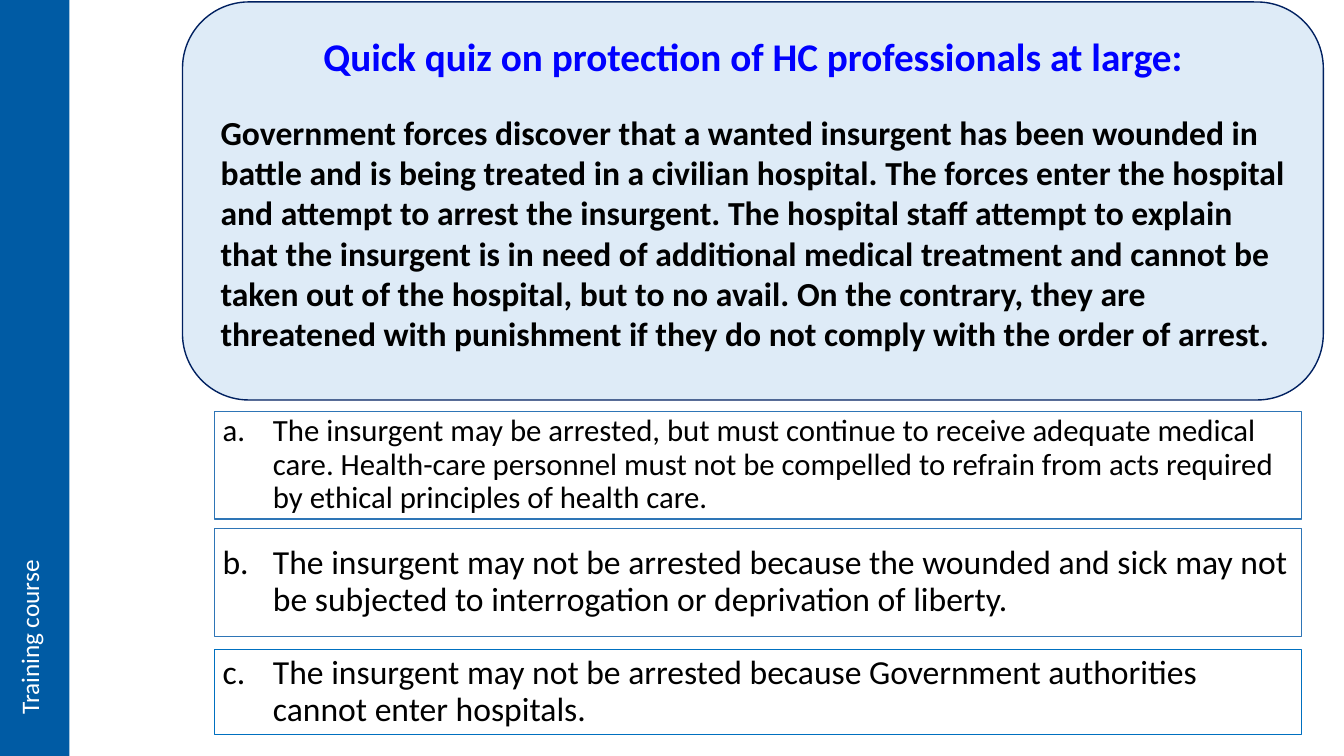
from dataclasses import dataclass

from lxml import etree
from pptx import Presentation
from pptx.dml.color import RGBColor
from pptx.enum.shapes import MSO_SHAPE
from pptx.enum.text import MSO_ANCHOR as ANCHOR, PP_ALIGN as ALIGN
from pptx.oxml.ns import qn
from pptx.shapes.autoshape import Shape
from pptx.slide import Slide
from pptx.text.text import TextFrame, _Paragraph as Paragraph
from pptx.util import Cm, Pt

FONT = "Calibri"
WHITE = RGBColor(0xFF, 0xFF, 0xFF)
BLACK = RGBColor(0x00, 0x00, 0x00)
SIDEBAR = RGBColor(0x00, 0x5B, 0xA4)
PANEL = RGBColor(0xDE, 0xEB, 0xF7)
NAVY = RGBColor(0x00, 0x20, 0x60)
TITLE = RGBColor(0x00, 0x00, 0xFF)
BLUE = RGBColor(0x2E, 0x75, 0xB6)
BRIGHT_BLUE = RGBColor(0x00, 0x70, 0xC0)

HEADING = "Quick quiz on protection of HC professionals at large:"
SCENARIO = (
    "Government forces discover that a wanted insurgent has been wounded in battle "
    "and is being treated in a civilian hospital. The forces enter the hospital and "
    "attempt to arrest the insurgent. The hospital staff attempt to explain that the "
    "insurgent is in need of additional medical treatment and cannot be taken out of "
    "the hospital, but to no avail. On the contrary, they are threatened with "
    "punishment if they do not comply with the order of arrest."
)


@dataclass
class Answer:
    top: float
    height: float
    size: int
    line: RGBColor
    text: str


ANSWERS = [
    Answer(10.36, 2.72, 22, BLUE,
           "The insurgent may be arrested, but must continue to receive adequate "
           "medical care. Health-care personnel must not be compelled to refrain "
           "from acts required by ethical principles of health care."),
    Answer(13.31, 2.72, 24, BLUE,
           "The insurgent may not be arrested because the wounded and sick may not "
           "be subjected to interrogation or deprivation of liberty."),
    Answer(16.36, 2.16, 24, BRIGHT_BLUE,
           "The insurgent may not be arrested because Government authorities cannot "
           "enter hospitals."),
]


def add_run(p: Paragraph, text: str, size: int, color: RGBColor, bold: bool = False) -> None:
    r = p.add_run()
    r.text = text
    r.font.name = FONT
    r.font.size = Pt(size)
    r.font.bold = bold
    r.font.color.rgb = color


def set_frame(tf: TextFrame, inset: float, anchor: ANCHOR) -> None:
    tf.word_wrap = True
    tf.vertical_anchor = anchor
    tf.margin_left = tf.margin_right = Cm(inset)
    tf.margin_top = tf.margin_bottom = Cm(inset)


def add_box(slide: Slide, kind: MSO_SHAPE, left: float, top: float, width: float,
            height: float, fill: RGBColor, line: RGBColor | None = None,
            weight: float = 1) -> Shape:
    sp = slide.shapes.add_shape(kind, Cm(left), Cm(top), Cm(width), Cm(height))
    sp.shadow.inherit = False
    sp.fill.solid()
    sp.fill.fore_color.rgb = fill
    if line is None:
        sp.line.fill.background()
    else:
        sp.line.color.rgb = line
        sp.line.width = Pt(weight)
    return sp


def add_sidebar(slide: Slide) -> None:
    add_box(slide, MSO_SHAPE.RECTANGLE, 0, 0, 1.75, 19.05, SIDEBAR)
    label = slide.shapes.add_textbox(Cm(0.23), Cm(14.25), Cm(1.27), Cm(4.01))
    tf = label.text_frame
    tf.word_wrap = False
    tf._txBody.bodyPr.set("vert", "vert270")
    add_run(tf.paragraphs[0], "Training course", 18, WHITE)


def add_question(slide: Slide) -> None:
    add_box(slide, MSO_SHAPE.ROUNDED_RECTANGLE, 4.6, 0.05, 28.75, 10.03, PANEL, NAVY)

    title = slide.shapes.title
    title.left, title.top, title.width, title.height = Cm(5.26), Cm(0.79), Cm(27.43), Cm(1.21)
    title.element.getparent().append(title.element)
    set_frame(title.text_frame, 0, ANCHOR.MIDDLE)
    p = title.text_frame.paragraphs[0]
    p.alignment = ALIGN.CENTER
    p.line_spacing = 1.0
    add_run(p, HEADING, 28, TITLE, bold=True)

    scenario = slide.shapes.add_textbox(Cm(5.26), Cm(2.51), Cm(27.43), Cm(6.8))
    set_frame(scenario.text_frame, 0.3, ANCHOR.TOP)
    add_run(scenario.text_frame.paragraphs[0], SCENARIO, 24, BLACK, bold=True)


def add_answer(slide: Slide, answer: Answer, number: int) -> None:
    sp = add_box(slide, MSO_SHAPE.RECTANGLE, 5.41, answer.top, 27.38, answer.height,
                 WHITE, answer.line, 0.75)
    set_frame(sp.text_frame, 0.2, ANCHOR.MIDDLE)
    p = sp.text_frame.paragraphs[0]
    p.alignment = ALIGN.LEFT
    p.line_spacing = 0.9
    pPr = p._p.get_or_add_pPr()
    pPr.set("marL", str(Cm(1.27)))
    pPr.set("indent", str(-Cm(1.27)))
    etree.SubElement(pPr, qn("a:buFont"), typeface=FONT)
    etree.SubElement(pPr, qn("a:buAutoNum"), type="alphaLcPeriod", startAt=str(number))
    add_run(p, answer.text, answer.size, BLACK)


def main() -> None:
    prs = Presentation()
    prs.slide_width, prs.slide_height = Cm(33.87), Cm(19.05)
    slide = prs.slides.add_slide(prs.slide_layouts[5])
    add_sidebar(slide)
    add_question(slide)
    for number, answer in enumerate(ANSWERS, start=1):
        add_answer(slide, answer, number)
    prs.save("out.pptx")


if __name__ == "__main__":
    main()
